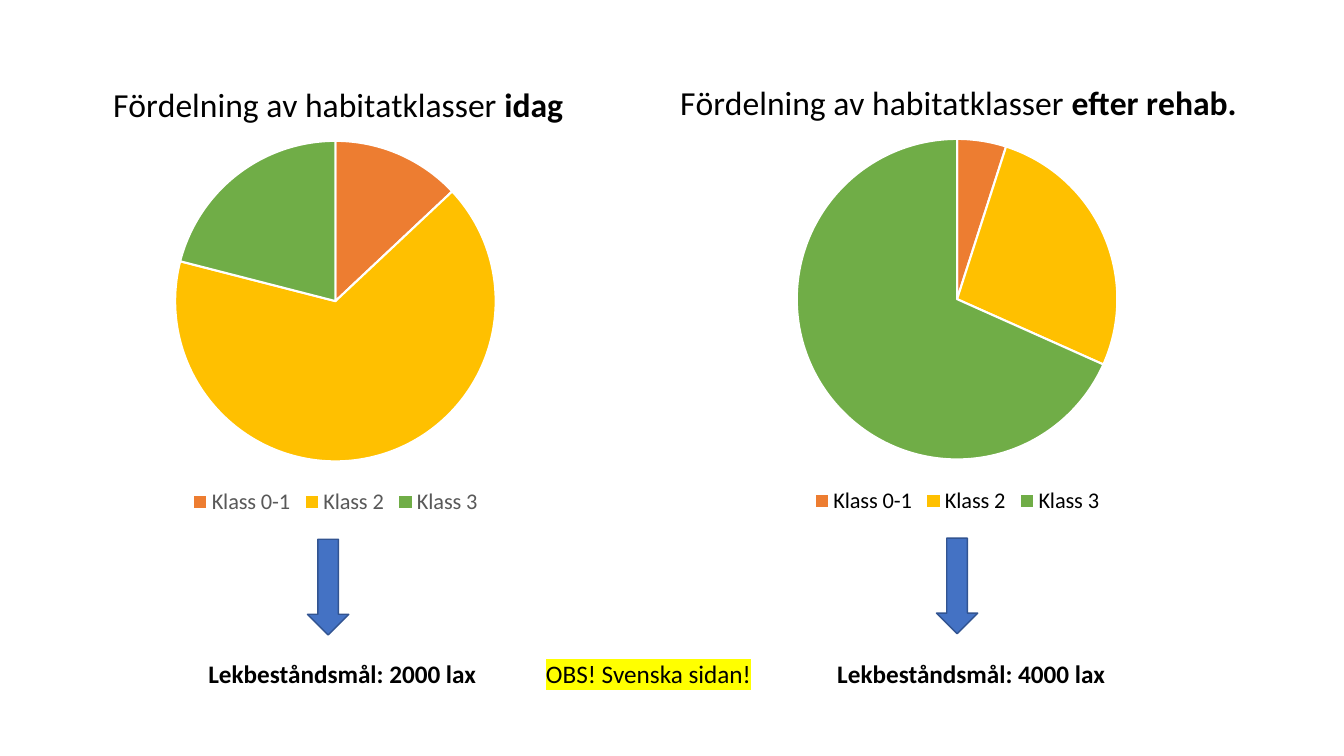
from lxml import etree
from pptx import Presentation
from pptx.chart.data import CategoryChartData
from pptx.dml.color import RGBColor
from pptx.enum import chart as ch, shapes, text
from pptx.oxml import parse_xml
from pptx.oxml.ns import nsdecls, qn
from pptx.util import Cm, Pt

FONT = "Calibri"
CLASSES = [("Klass 0-1", "ED7D31"), ("Klass 2", "FFC000"), ("Klass 3", "70AD47")]
TITLE = "Fördelning av habitatklasser "
# Boxes are left, top, width, height in cm; title_x is a share of the chart width.
PANELS = [
    dict(when="idag", values=(13, 66, 21), box=(0.1, 1.55, 16.71, 11.56),
         title_x=0.16, legend="595959", arrow=(7.75, 13.59),
         goal="Lekbeståndsmål: 2000 lax", goal_x=5.0),
    dict(when="efter rehab.", values=(5, 27, 69), box=(15.19, 1.5, 17.86, 11.58),
         title_x=0.105, legend="000000", arrow=(23.6, 13.56),
         goal="Lekbeståndsmål: 4000 lax", goal_x=20.85),
]
NOTE = "OBS! Svenska sidan!"
NOTE_X, TEXT_Y, TEXT_H = 13.51, 16.46, 1.02
GOAL_W, NOTE_W = 7.42, 6.25
ARROW_SIZE = (1.04, 2.41)
PIE_SIZE, PIE_TOP, TITLE_TOP = 8.08, 2.0, 0.5


def rgb(value):
    return RGBColor.from_string(value)


def style(font, size, color="000000", bold=False):
    font.name, font.size, font.bold = FONT, Pt(size), bold
    font.color.rgb = rgb(color)


def set_layout(parent, before, **shares):
    """Place a chart part by shares of the chart size."""
    for old in parent.findall(qn("c:layout")):
        parent.remove(old)
    target = '<c:layoutTarget val="inner"/>' if "w" in shares else ""
    modes = "".join(f'<c:{k}Mode val="edge"/>' for k in "xy")
    values = "".join(f'<c:{k} val="{v:.4f}"/>' for k, v in shares.items())
    layout = parse_xml(f'<c:layout {nsdecls("c")}><c:manualLayout>{target}{modes}'
                       f'{values}</c:manualLayout></c:layout>')
    if before is None:
        parent.insert(0, layout)
    else:
        before.addnext(layout)


def add_pie(s, panel):
    data = CategoryChartData()
    data.categories = [name for name, _ in CLASSES]
    data.add_series("Series 1", panel["values"])
    chart = s.shapes.add_chart(ch.XL_CHART_TYPE.PIE, *map(Cm, panel["box"]), data).chart
    style(chart.font, 10)

    chart.has_title = True
    title = chart.chart_title
    p = title.text_frame.paragraphs[0]
    for words, bold in ((TITLE, False), (panel["when"], True)):
        r = p.add_run()
        r.text = words
        style(r.font, 24, bold=bold)
    title.include_in_layout = False
    _, _, width, height = panel["box"]
    element = title._element
    set_layout(element, element.find(qn("c:tx")),
               x=panel["title_x"], y=TITLE_TOP / height)

    chart.has_legend = True
    chart.legend.position = ch.XL_LEGEND_POSITION.BOTTOM
    chart.legend.include_in_layout = False
    style(chart.legend.font, 16, panel["legend"])

    plot = chart.plots[0]
    plot.vary_by_categories = True
    for i, (_, color) in enumerate(CLASSES):
        fmt = plot.series[0].points[i].format
        fmt.fill.solid()
        fmt.fill.fore_color.rgb = rgb(color)
        fmt.line.color.rgb = rgb("FFFFFF")
        fmt.line.width = Pt(1.5)
    w, h = PIE_SIZE / width, PIE_SIZE / height
    set_layout(plot._element.getparent(), None,
               x=(1 - w) / 2, y=PIE_TOP / height, w=w, h=h)


def add_arrow(s, place):
    sp = s.shapes.add_shape(shapes.MSO_SHAPE.DOWN_ARROW, *map(Cm, place + ARROW_SIZE))
    sp.shadow.inherit = False
    sp.fill.solid()
    sp.fill.fore_color.rgb = rgb("4472C4")
    sp.line.color.rgb = rgb("325491")
    sp.line.width = Pt(1)


def add_label(s, words, left, width, bold=False, highlight=None):
    tf = s.shapes.add_textbox(*map(Cm, (left, TEXT_Y, width, TEXT_H))).text_frame
    tf.word_wrap = True
    tf.auto_size = text.MSO_AUTO_SIZE.SHAPE_TO_FIT_TEXT
    r = tf.paragraphs[0].add_run()
    r.text = words
    style(r.font, 18, bold=bold)
    if highlight:
        mark = etree.Element(qn("a:highlight"))
        etree.SubElement(mark, qn("a:srgbClr")).set("val", highlight)
        r._r.rPr.find(qn("a:solidFill")).addnext(mark)


def main():
    prs = Presentation()
    prs.slide_width, prs.slide_height = Cm(33.87), Cm(19.05)
    s = prs.slides.add_slide(prs.slide_layouts[6])
    for panel in PANELS:
        add_pie(s, panel)
        add_arrow(s, panel["arrow"])
        add_label(s, panel["goal"], panel["goal_x"], GOAL_W, bold=True)
    add_label(s, NOTE, NOTE_X, NOTE_W, highlight="FFFF00")
    prs.save("out.pptx")


if __name__ == "__main__":
    main()
